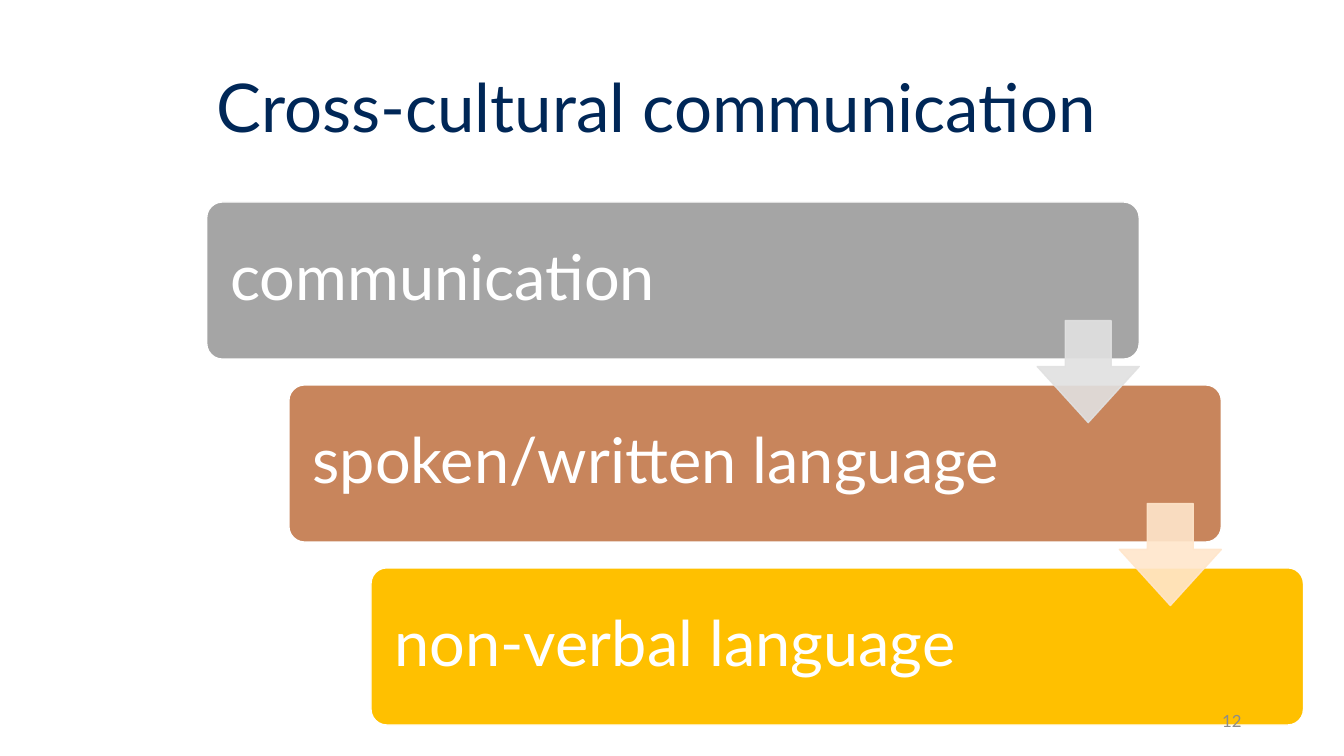
import pptx
import pptx.dml.color
import pptx.enum.shapes
import pptx.enum.text
import pptx.oxml
import pptx.oxml.ns
import pptx.util

Cm, Pt = pptx.util.Cm, pptx.util.Pt
RGBColor = pptx.dml.color.RGBColor
Shape = pptx.enum.shapes.MSO_SHAPE
Align = pptx.enum.text.PP_ALIGN
Anchor = pptx.enum.text.MSO_ANCHOR

NAVY = RGBColor(0x00, 0x27, 0x57)
WHITE = RGBColor(0xFF, 0xFF, 0xFF)
GREY = RGBColor(0xA5, 0xA5, 0xA5)
COPPER = RGBColor(0xC8, 0x85, 0x5C)
GOLD = RGBColor(0xFF, 0xC0, 0x00)
SILVER = RGBColor(0xE1, 0xE1, 0xE1)
CREAM = RGBColor(0xFF, 0xE6, 0xCB)
MUTED = RGBColor(0x8C, 0x8C, 0x8C)

STEPS = [("communication", GREY), ("spoken/written language", COPPER),
         ("non-verbal language", GOLD)]
ARROWS = [SILVER, CREAM]
SHIFT, DROP = 2.07, 4.61


def write(shape, text, size, color, align=Align.LEFT, spacing=None,
          inset=(0.25, 0.13)):
    frame = shape.text_frame
    frame.word_wrap = True
    frame.vertical_anchor = Anchor.MIDDLE
    frame.margin_left = frame.margin_right = Cm(inset[0])
    frame.margin_top = frame.margin_bottom = Cm(inset[1])
    para = frame.paragraphs[0]
    para.text = text
    para.alignment = align
    para.line_spacing = spacing
    para.font.name = "Lato"
    para.font.size = Pt(size)
    para.font.color.rgb = color


def fade(shape, percent):
    """Make the fill and line of a shape partly transparent."""
    for color in shape.element.spPr.iter(pptx.oxml.ns.qn("a:srgbClr")):
        alpha = pptx.oxml.parse_xml(
            f'<a:alpha {pptx.oxml.ns.nsdecls("a")} val="{percent * 1000}"/>')
        color.append(alpha)


class Deck:
    def __init__(self):
        self.show = pptx.Presentation()
        self.show.slide_width = Cm(33.87)
        self.show.slide_height = Cm(19.05)
        self.slide = self.show.slides.add_slide(self.show.slide_layouts[6])

    def label(self, text, left, top, width, height, **style):
        box = self.slide.shapes.add_textbox(
            Cm(left), Cm(top), Cm(width), Cm(height))
        write(box, text, **style)

    def block(self, kind, left, top, width, height, fill, line, adjust):
        shape = self.slide.shapes.add_shape(
            kind, Cm(left), Cm(top), Cm(width), Cm(height))
        shape.shadow.inherit = False
        shape.fill.solid()
        shape.fill.fore_color.rgb = fill
        shape.line.color.rgb = line
        shape.line.width = Pt(1)
        for i, value in enumerate(adjust):
            shape.adjustments[i] = value
        return shape

    def step(self, row, text, fill):
        box = self.block(Shape.ROUNDED_RECTANGLE, 5.21 + row * SHIFT,
                         5.09 + row * DROP, 23.5, 3.96, fill, WHITE, [0.1])
        write(box, text, 45, WHITE, spacing=0.9, inset=(0.48, 0.48))

    def arrow(self, row, color):
        arrow = self.block(Shape.DOWN_ARROW, 26.14 + row * SHIFT,
                           8.08 + row * DROP, 2.57, 2.57, color, color,
                           [0.45, 0.55])
        fade(arrow, 90)


def main():
    deck = Deck()
    deck.label("Cross-cultural communication", 5.21, 1.02, 27.64, 3.56,
               size=48, color=NAVY, spacing=0.9)
    for row, (text, fill) in enumerate(STEPS):
        deck.step(row, text, fill)
    for row, color in enumerate(ARROWS):
        deck.arrow(row, color)
    deck.label("12", 23.92, 17.66, 7.62, 1.01,
               size=12, color=MUTED, align=Align.RIGHT)
    deck.show.save("out.pptx")


if __name__ == "__main__":
    main()
